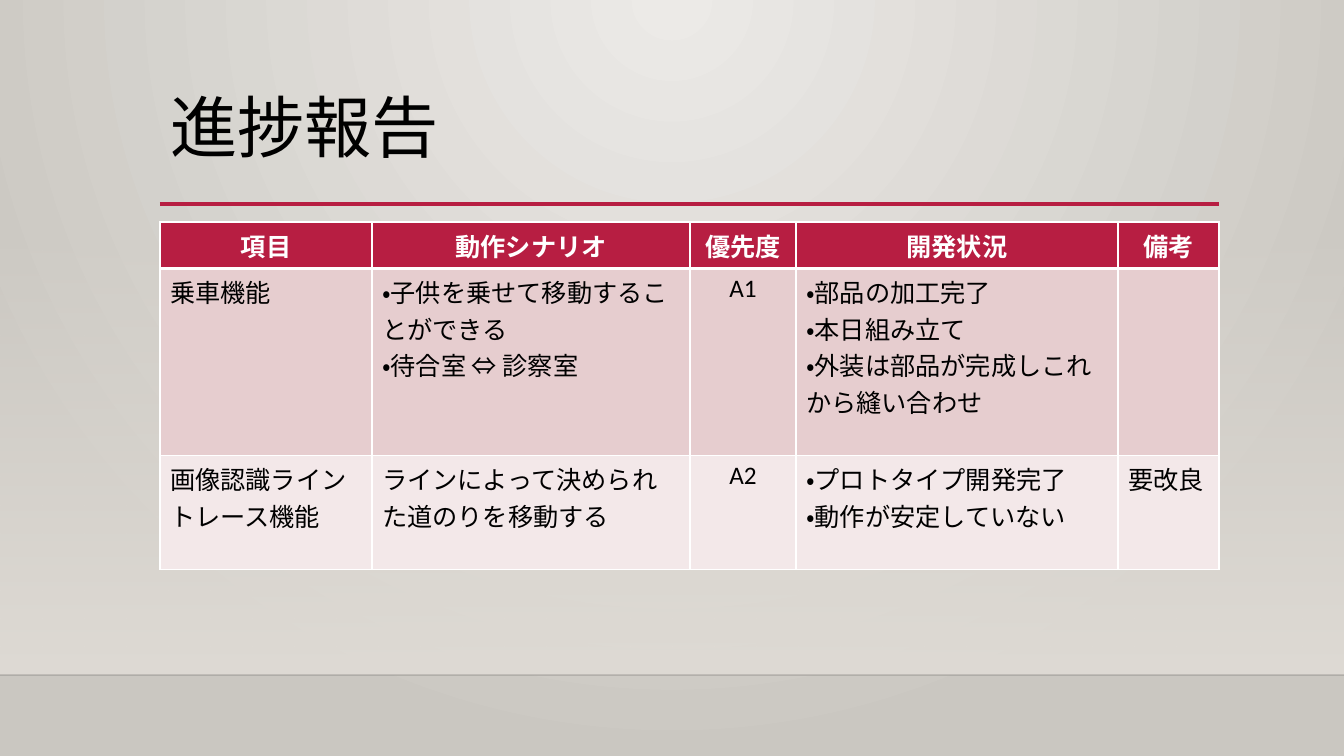
from lxml import etree
from pptx import Presentation
from pptx.dml.color import RGBColor
from pptx.enum.lang import MSO_LANGUAGE_ID as Lang
from pptx.enum.shapes import MSO_CONNECTOR as Connector, MSO_SHAPE as Shape
from pptx.enum.text import MSO_ANCHOR as Anchor, PP_ALIGN as Align
from pptx.oxml import parse_xml
from pptx.oxml.ns import nsdecls, qn
from pptx.util import Pt

TITLE = "進捗報告"
HEADER = ["項目", "動作シナリオ", "優先度", "開発状況", "備考"]
ITEMS = [
    ["乗車機能",
     "・子供を乗せて移動することができる\n・待合室 ⇔ 診察室",
     "A1",
     "・部品の加工完了\n・本日組み立て\n・外装は部品が完成しこれから縫い合わせ",
     ""],
    ["画像認識ライントレース機能",
     "ラインによって決められた道のりを移動する",
     "A2",
     "・プロトタイプ開発完了\n・動作が安定していない",
     "要改良"],
]
PRIORITY = HEADER.index("優先度")

FONT = "Calibri"
RED, BLACK, WHITE = "B71E42", "000000", "FFFFFF"
ROW_FILLS = [RED, "E6CDCF", "F3E8E9"]
WALL = "DFDBD5"
GLOW, EDGE = "ECEAE7", "CAC7C1"

WIDTH, HEIGHT = 1344, 756
LEFT, RIGHT = 160, 1219
TITLE_TOP, TITLE_HEIGHT = 89, 116
RULE_Y = 204
TABLE_TOP = 222
FLOOR_Y = 675
WALL_TOP = 223
COLUMNS = [212, 318, 106, 322, 101]
ROWS = [46, 187, 114]


def px(length):
    return round(length * 12192000 / WIDTH)


def color(value):
    return RGBColor.from_string(value)


def write(frame, text, size=18, ink=BLACK, bold=False, align=Align.LEFT, spacing=None):
    frame.text = text
    for paragraph in frame.paragraphs:
        paragraph.alignment = align
        paragraph.line_spacing = spacing
        paragraph.font.size = Pt(size)
        for run in paragraph.runs:
            font = run.font
            font.name, font.size, font.bold = FONT, Pt(size), bold
            font.color.rgb = color(ink)
            font.language_id = Lang.JAPANESE


def set_gradient(fill, stops, direction):
    """Replace a fill's gradient by (position, colour, opacity) stops, in percent."""
    fill.gradient()
    gradient = fill._xPr.find(qn("a:gradFill"))
    stop_xml = "".join(
        f'<a:gs pos="{pos * 1000}"><a:srgbClr val="{tint}">'
        f'<a:alpha val="{opacity * 1000}"/></a:srgbClr></a:gs>'
        for pos, tint, opacity in stops)
    gradient.getparent().replace(gradient, parse_xml(
        f'<a:gradFill {nsdecls("a")} rotWithShape="1">'
        f'<a:gsLst>{stop_xml}</a:gsLst>{direction}</a:gradFill>'))


def add_rule(shapes, left, right, y, tint, width, opacity=100):
    rule = shapes.add_connector(Connector.STRAIGHT, px(left), px(y), px(right), px(y))
    rule.line.color.rgb = color(tint)
    rule.line.width = Pt(width)
    properties = rule._element.spPr
    if opacity < 100:
        tint_element = properties.find(".//" + qn("a:srgbClr"))
        etree.SubElement(tint_element, qn("a:alpha"), val=str(opacity * 1000))
    etree.SubElement(properties, qn("a:effectLst"))


def set_borders(cell, top, bottom):
    properties = cell._tc.get_or_add_tcPr()
    for side, width in (("L", 1), ("R", 1), ("T", top), ("B", bottom)):
        properties.append(parse_xml(
            f'<a:ln{side} {nsdecls("a")} w="{Pt(width)}"><a:solidFill>'
            f'<a:srgbClr val="{WHITE}"/></a:solidFill></a:ln{side}>'))


def add_backdrop(slide):
    set_gradient(slide.background.fill, [(0, GLOW, 100), (100, EDGE, 100)],
                 '<a:path path="circle">'
                 '<a:fillToRect l="43000" t="0" r="43000" b="100000"/></a:path>')
    wall = slide.shapes.add_shape(
        Shape.RECTANGLE, 0, px(WALL_TOP), px(WIDTH), px(FLOOR_Y - WALL_TOP))
    wall.shadow.inherit = False
    wall.line.fill.background()
    set_gradient(wall.fill, [(0, WALL, 0), (100, WALL, 100)],
                 '<a:lin ang="5400000" scaled="0"/>')
    add_rule(slide.shapes, 0, WIDTH, FLOOR_Y, "000001", 1, opacity=20)
    add_rule(slide.shapes, LEFT, RIGHT, RULE_Y, RED, 2.5)


def add_progress_table(slide):
    table = slide.shapes.add_table(
        len(ROWS), len(COLUMNS), px(LEFT), px(TABLE_TOP),
        px(sum(COLUMNS)), px(sum(ROWS))).table
    for column, width in zip(table.columns, COLUMNS):
        column.width = px(width)
    for r, texts in enumerate([HEADER, *ITEMS]):
        table.rows[r].height = px(ROWS[r])
        is_header = r == 0
        for c, text in enumerate(texts):
            cell = table.cell(r, c)
            set_borders(cell, top=3 if r == 1 else 1, bottom=3 if is_header else 1)
            cell.fill.solid()
            cell.fill.fore_color.rgb = color(ROW_FILLS[r])
            centred = is_header or c == PRIORITY
            write(cell.text_frame, text, bold=is_header,
                  ink=WHITE if is_header else BLACK,
                  align=Align.CENTER if centred else Align.LEFT)


def main():
    deck = Presentation()
    deck.slide_width, deck.slide_height = px(WIDTH), px(HEIGHT)
    slide = deck.slides.add_slide(deck.slide_layouts[5])
    add_backdrop(slide)

    title = slide.shapes.title
    title.left, title.top = px(LEFT), px(TITLE_TOP)
    title.width, title.height = px(RIGHT - LEFT), px(TITLE_HEIGHT)
    title.text_frame.vertical_anchor = Anchor.TOP
    write(title.text_frame, TITLE, size=48, spacing=0.9)

    add_progress_table(slide)
    deck.save("out.pptx")


if __name__ == "__main__":
    main()
